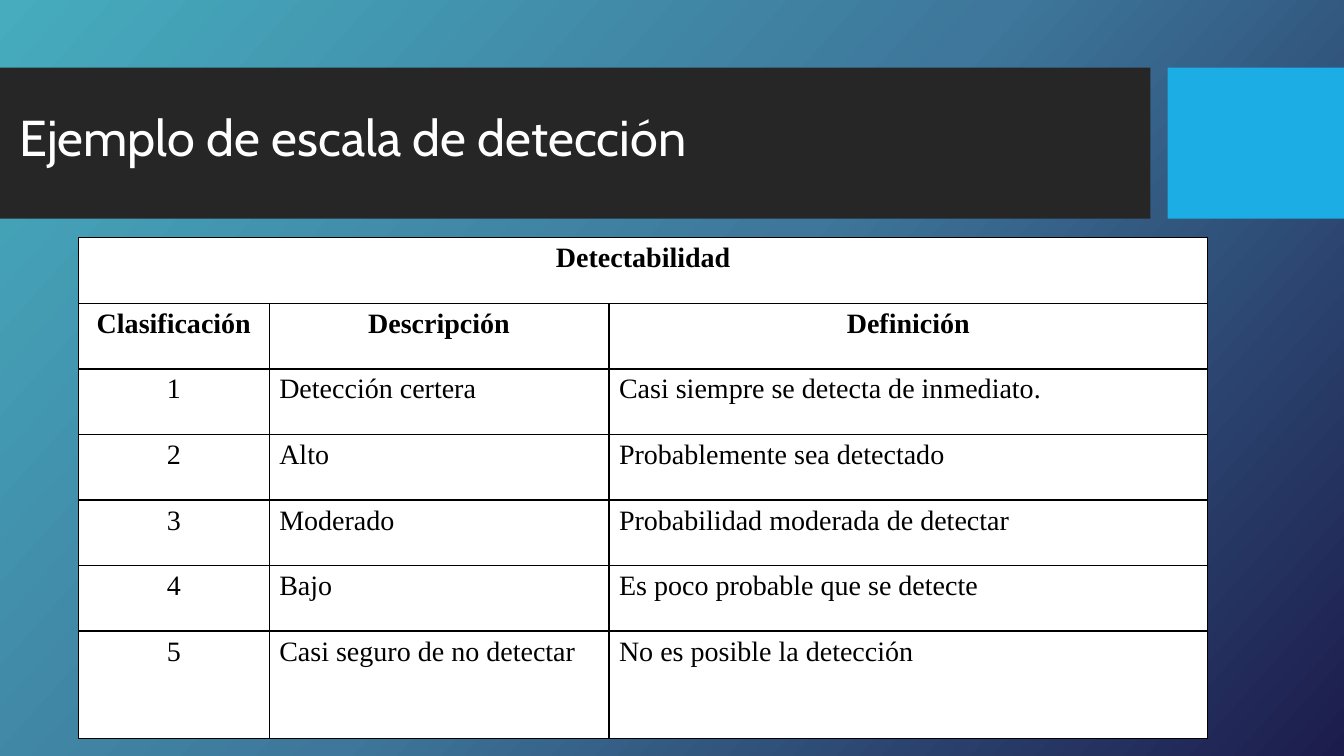
"""Build the slide that shows an example detection scale."""
from copy import deepcopy
from dataclasses import dataclass

from lxml import etree
from pptx import Presentation
from pptx import util as u
from pptx.dml.color import RGBColor
from pptx.enum import shapes, text
from pptx.oxml.ns import qn


@dataclass
class Bar:
    left: float
    width: float
    fill: str


BARS = [Bar(0, 11.41, "262626"), Bar(11.58, 1.75, "1CADE4")]
BAR_TOP, BAR_HEIGHT = 0.67, 1.5
STOPS = [(0, "46ACBE"), (0.5, "3E779B"), (1, "1C1C4C")]
GRADIENT_ANGLE = 360 - 42
TITLE = "Ejemplo de escala de detección"
COLUMNS = [1.89, 3.37, 5.94]
ROWS = [0.65] * 6 + [1.07]
HEADER_ROWS = 2
SCALE = [
    ("Detectabilidad", "", ""),
    ("Clasificación", "Descripción", "Definición"),
    ("1", "Detección certera", "Casi siempre se detecta de inmediato."),
    ("2", "Alto", "Probablemente sea detectado"),
    ("3", "Moderado", "Probabilidad moderada de detectar"),
    ("4", "Bajo", "Es poco probable que se detecte"),
    ("5", "Casi seguro de no detectar", "No es posible la detección"),
]
TITLE_FONT = {"name": "Cabin", "size": u.Pt(36), "bold": False}
TABLE_FONT = {"name": "Times New Roman", "size": u.Pt(20)}


def color(value: str) -> RGBColor:
    return RGBColor.from_string(value)


def set_values(target, values: dict) -> None:
    for name, value in values.items():
        setattr(target, name, value)


def write(para, words: str, font: dict, ink: str) -> None:
    span = para.add_run()
    span.text = words
    set_values(span.font, font)
    span.font.color.rgb = color(ink)


def paint_background(page) -> None:
    fill = page.background.fill
    fill.gradient()
    stop_list = page.element.xpath(".//a:gsLst")[0]
    stop_list.append(deepcopy(stop_list[0]))
    for stop, (position, shade) in zip(fill.gradient_stops, STOPS):
        stop.position = position
        stop.color.rgb = color(shade)
    fill.gradient_angle = GRADIENT_ANGLE


def draw_bar(page, bar: Bar) -> None:
    box = page.shapes.add_shape(
        shapes.MSO_SHAPE.RECTANGLE, u.Inches(bar.left), u.Inches(BAR_TOP),
        u.Inches(bar.width), u.Inches(BAR_HEIGHT))
    box.shadow.inherit = False
    box.fill.solid()
    box.fill.fore_color.rgb = color(bar.fill)
    box.line.fill.background()


def place_title(page) -> None:
    title = page.shapes.title
    page.shapes.element.append(title.element)
    set_values(title, {"left": u.Inches(0.09), "top": u.Inches(0.77),
                       "width": u.Inches(9), "height": u.Inches(1.25)})
    set_values(title.text_frame, {"word_wrap": True,
                                  "vertical_anchor": text.MSO_ANCHOR.MIDDLE})
    para = title.text_frame.paragraphs[0]
    set_values(para, {"alignment": text.PP_ALIGN.LEFT, "line_spacing": 0.9})
    write(para, TITLE, TITLE_FONT, "FFFFFF")


def draw_borders(cell) -> None:
    properties = cell._tc.get_or_add_tcPr()
    for side in ("a:lnL", "a:lnR", "a:lnT", "a:lnB"):
        line = etree.SubElement(properties, qn(side), w=str(u.Pt(1)))
        solid = etree.SubElement(line, qn("a:solidFill"))
        etree.SubElement(solid, qn("a:srgbClr"), val="000000")


def draw_table(page) -> None:
    table = page.shapes.add_table(
        len(ROWS), len(COLUMNS), u.Inches(0.78), u.Inches(2.36),
        u.Inches(sum(COLUMNS)), u.Inches(sum(ROWS))).table
    set_values(table, {"first_row": False, "horz_banding": False})
    for column, width in zip(table.columns, COLUMNS):
        column.width = u.Inches(width)
    for row, height in zip(table.rows, ROWS):
        row.height = u.Inches(height)
    table.cell(0, 0).merge(table.cell(0, len(COLUMNS) - 1))
    for row, entries in enumerate(SCALE):
        for column, words in enumerate(entries):
            cell = table.cell(row, column)
            draw_borders(cell)
            cell.fill.solid()
            cell.fill.fore_color.rgb = color("FFFFFF")
            if not words:
                continue
            header = row < HEADER_ROWS
            para = cell.text_frame.paragraphs[0]
            centred = header or column == 0
            para.alignment = text.PP_ALIGN.CENTER if centred else text.PP_ALIGN.LEFT
            write(para, words, TABLE_FONT | {"bold": header}, "000000")


def main() -> None:
    deck = Presentation()
    set_values(deck, {"slide_width": u.Inches(13.33), "slide_height": u.Inches(7.5)})
    page = deck.slides.add_slide(deck.slide_layouts.get_by_name("Title Only"))
    paint_background(page)
    for bar in BARS:
        draw_bar(page, bar)
    draw_table(page)
    place_title(page)
    deck.save("out.pptx")


if __name__ == "__main__":
    main()
